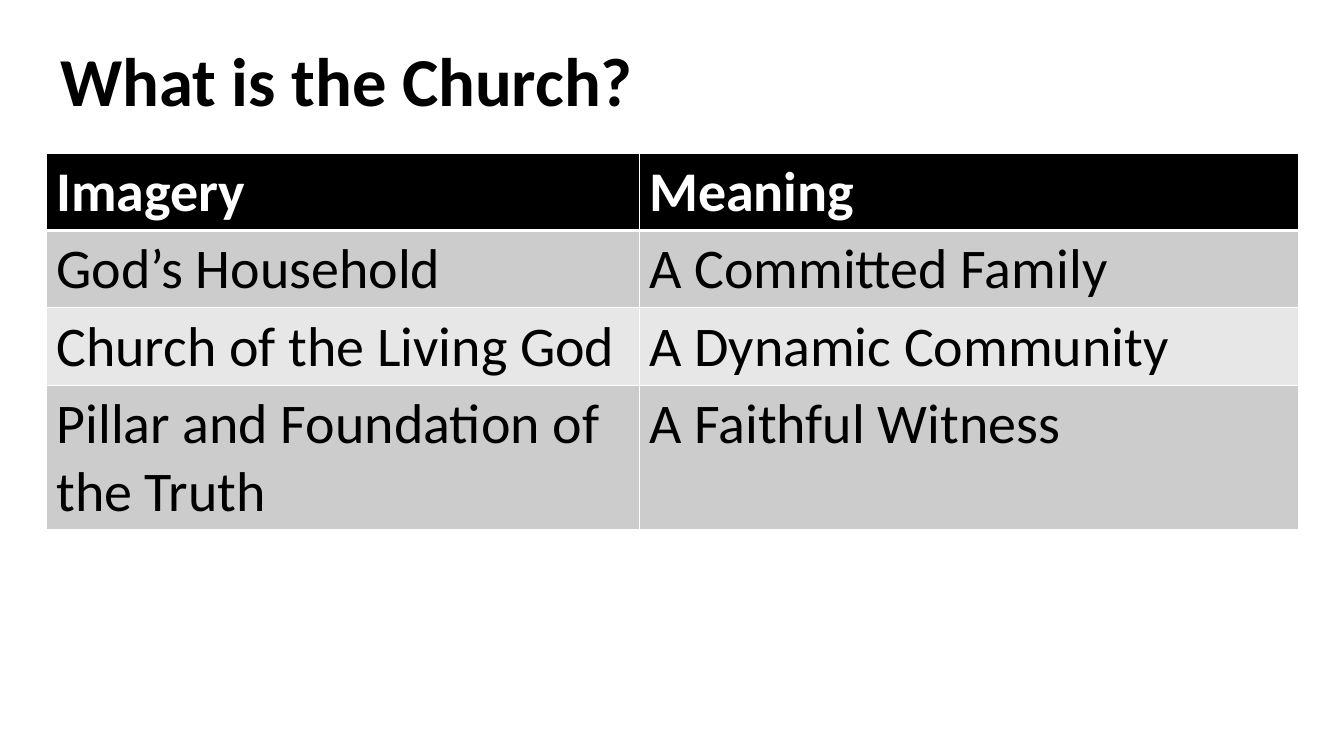
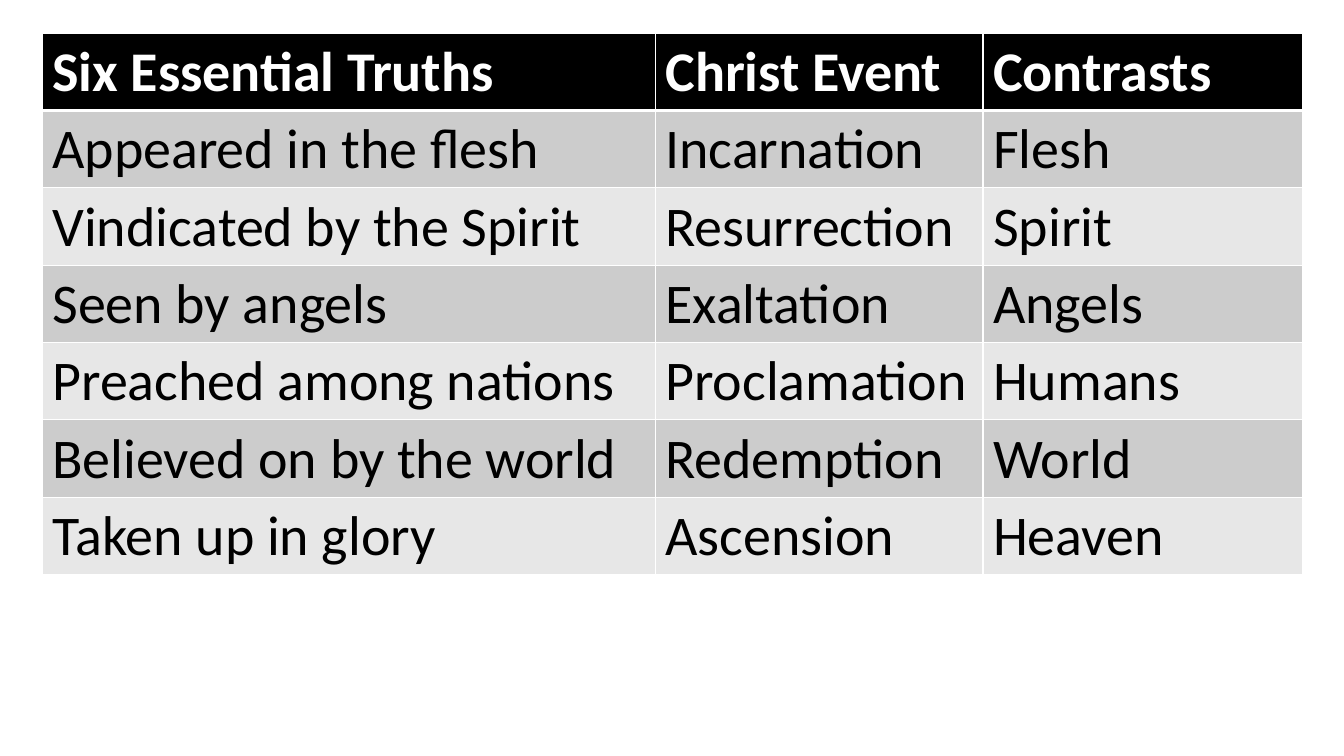
from dataclasses import dataclass
from typing import Optional

from lxml import etree
from pptx import Presentation
from pptx.dml.color import RGBColor
from pptx.enum import text as t
from pptx.oxml import ns
from pptx.util import Inches, Pt

# Shared look
FONT = "Calibri"
BLACK, WHITE = "000000", "FFFFFF"
BANDS = ("CCCCCC", "E7E7E7")
THIN, THICK = 1, 3
ROW = 0.47  # least row height; rows grow with their text


@dataclass
class Grid:
    left: float
    top: float
    height: float
    cols: tuple[float, ...]
    rows: tuple[tuple[str, ...], ...]
    title: Optional[str] = None


GRIDS = (
    Grid(0.46, 1.52, 3.73, (5.88, 6.54), (
        ("Imagery", "Meaning"),
        ("God’s Household", "A Committed Family"),
        ("Church of the Living God", "A Dynamic Community"),
        ("Pillar and Foundation of the Truth", "A Faithful Witness"),
    ), "What is the Church?"),
    Grid(0.42, 0.33, 5.37, (6.08, 3.25, 3.17), (
        ("Six Essential Truths", "Christ Event", "Contrasts"),
        ("Appeared in the flesh", "Incarnation", "Flesh"),
        ("Vindicated by the Spirit", "Resurrection", "Spirit"),
        ("Seen by angels", "Exaltation", "Angels"),
        ("Preached among nations", "Proclamation", "Humans"),
        ("Believed on by the world", "Redemption", "World"),
        ("Taken up in glory", "Ascension", "Heaven"),
    )),
)


def color(code: str) -> RGBColor:
    return RGBColor.from_string(code)


def style(para, size: float, code: str, bold: bool) -> None:
    font = para.font
    font.name, font.size, font.bold = FONT, Pt(size), bold
    font.color.rgb = color(code)


def border(cell, row: int) -> None:
    """White cell edges, with a thick rule under the header."""
    props = cell._tc.get_or_add_tcPr()
    top = THICK if row == 1 else THIN
    base = THICK if row == 0 else THIN
    for side, width in (("L", THIN), ("R", THIN), ("T", top), ("B", base)):
        line = etree.SubElement(props, ns.qn(f"a:ln{side}"), w=str(Pt(width)))
        fill = etree.SubElement(line, ns.qn("a:solidFill"))
        etree.SubElement(fill, ns.qn("a:srgbClr"), val=WHITE)


def add_title(slide, words: str) -> None:
    title = slide.shapes.title
    title.left, title.top = Inches(0.5), Inches(0.33)
    title.width, title.height = Inches(12.33), Inches(0.93)
    frame = title.text_frame
    frame.text = words
    frame.word_wrap = True
    frame.auto_size = t.MSO_AUTO_SIZE.SHAPE_TO_FIT_TEXT
    frame.vertical_anchor = t.MSO_ANCHOR.TOP
    para = frame.paragraphs[0]
    para.alignment = t.PP_ALIGN.LEFT
    style(para, 49, BLACK, True)


def add_grid(slide, grid: Grid) -> None:
    count = len(grid.rows)
    frame = slide.shapes.add_table(
        count, len(grid.cols), Inches(grid.left), Inches(grid.top),
        Inches(sum(grid.cols)), Inches(ROW * count))
    table = frame.table
    for col, width in zip(table.columns, grid.cols):
        col.width = Inches(width)
    for r, words in enumerate(grid.rows):
        table.rows[r].height = Inches(ROW)
        head = r == 0
        for c, word in enumerate(words):
            cell = table.cell(r, c)
            cell.text = word
            border(cell, r)
            cell.fill.solid()
            cell.fill.fore_color.rgb = color(BLACK if head else BANDS[(r - 1) % 2])
            style(cell.text_frame.paragraphs[0], 40, WHITE if head else BLACK, head)
    frame.height = Inches(grid.height)


def main() -> None:
    deck = Presentation()
    deck.slide_width, deck.slide_height = Inches(13.33), Inches(7.5)
    # Layout 5 is title only, 6 is blank
    for grid in GRIDS:
        slide = deck.slides.add_slide(deck.slide_layouts[5 if grid.title else 6])
        if grid.title:
            add_title(slide, grid.title)
        add_grid(slide, grid)
    deck.save("out.pptx")


if __name__ == "__main__":
    main()
